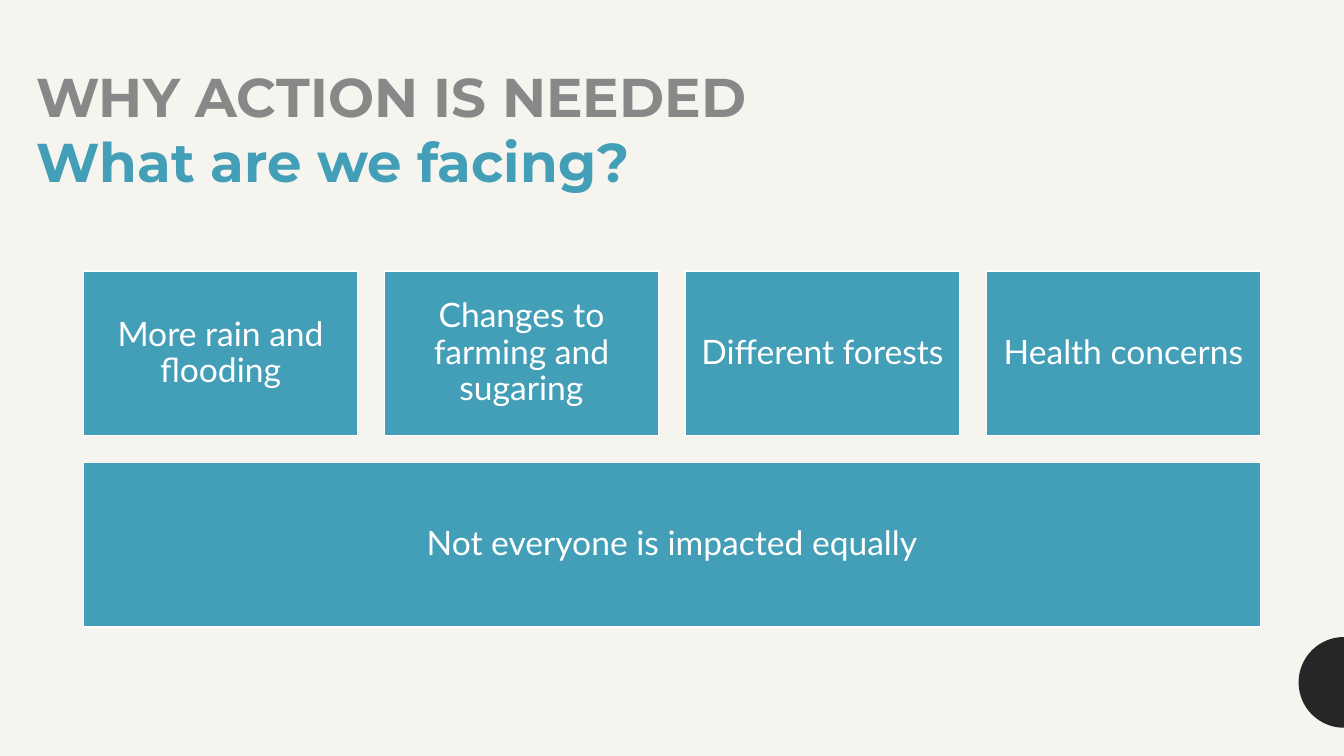
from math import cos, pi, sin

from pptx import Presentation
from pptx.dml.color import RGBColor
from pptx.enum.shapes import MSO_SHAPE
from pptx.enum.text import MSO_ANCHOR, MSO_AUTO_SIZE, PP_ALIGN
from pptx.util import Inches, Pt

COLORS = {
    "background": "F6F4EF",
    "gray": "888888",
    "teal": "439EB7",
    "white": "FFFFFF",
    "dark": "262626",
}
TITLE_LINES = [("WHY ACTION IS NEEDED", "gray"), ("What are we facing?", "teal")]
IMPACTS = [
    "More rain and flooding",
    "Changes to farming and sugaring",
    "Different forests",
    "Health concerns",
]
SUMMARY = "Not everyone is impacted equally"

SLIDE_WIDTH, SLIDE_HEIGHT = 13.33, 7.5
GRID_LEFT, GRID_TOP, GRID_WIDTH = 0.83, 2.69, 11.67
ROW_HEIGHT, GAP = 1.63, 0.27
COLUMN_WIDTH = (GRID_WIDTH - GAP * (len(IMPACTS) - 1)) / len(IMPACTS)
ARC_CENTER_Y, ARC_RADIUS, ARC_STEPS = 6.77, 0.45, 48


def color(name):
    return RGBColor.from_string(COLORS[name])


def set_margins(text_frame):
    text_frame.margin_left = text_frame.margin_right = Inches(0.1)
    text_frame.margin_top = text_frame.margin_bottom = Inches(0.1)
    text_frame.word_wrap = True


def format_run(run, font_name, size, color_name, bold=False):
    run.font.name = font_name
    run.font.size = Pt(size)
    run.font.bold = bold
    run.font.color.rgb = color(color_name)


def add_title(slide):
    title = slide.shapes.title
    title.left, title.top = Inches(0.26), Inches(0.52)
    title.width, title.height = Inches(11.34), Inches(1.52)
    text_frame = title.text_frame
    text_frame.text = "\n".join(text for text, _ in TITLE_LINES)
    set_margins(text_frame)
    text_frame.vertical_anchor = MSO_ANCHOR.TOP
    text_frame.auto_size = MSO_AUTO_SIZE.NONE
    for paragraph, (_, color_name) in zip(text_frame.paragraphs, TITLE_LINES):
        paragraph.alignment = PP_ALIGN.LEFT
        format_run(paragraph.runs[0], "Montserrat", 39, color_name, True)


def add_half_circle(slide):
    angles = [pi * step / ARC_STEPS for step in range(ARC_STEPS + 1)]
    points = [
        (
            Inches(SLIDE_WIDTH - ARC_RADIUS * sin(angle)),
            Inches(ARC_CENTER_Y - ARC_RADIUS * cos(angle)),
        )
        for angle in angles
    ]
    builder = slide.shapes.build_freeform(*points[0])
    builder.add_line_segments(points[1:], close=True)
    half_circle = builder.convert_to_shape()
    half_circle.shadow.inherit = False
    half_circle.fill.solid()
    half_circle.fill.fore_color.rgb = color("dark")
    half_circle.line.fill.background()


def add_card(slide, text, column, row, width):
    left = GRID_LEFT + column * (COLUMN_WIDTH + GAP)
    top = GRID_TOP + row * (ROW_HEIGHT + GAP)
    card = slide.shapes.add_shape(
        MSO_SHAPE.RECTANGLE,
        Inches(left), Inches(top), Inches(width), Inches(ROW_HEIGHT),
    )
    card.shadow.inherit = False
    card.fill.solid()
    card.fill.fore_color.rgb = color("teal")
    card.line.color.rgb = color("white")
    card.line.width = Pt(1)
    text_frame = card.text_frame
    text_frame.text = text
    set_margins(text_frame)
    text_frame.vertical_anchor = MSO_ANCHOR.MIDDLE
    paragraph = text_frame.paragraphs[0]
    paragraph.alignment = PP_ALIGN.CENTER
    paragraph.line_spacing = 0.9
    format_run(paragraph.runs[0], "Lato", 24, "white")


def main():
    presentation = Presentation()
    presentation.slide_width = Inches(SLIDE_WIDTH)
    presentation.slide_height = Inches(SLIDE_HEIGHT)
    slide = presentation.slides.add_slide(presentation.slide_layouts[5])
    slide.background.fill.solid()
    slide.background.fill.fore_color.rgb = color("background")
    add_half_circle(slide)
    for column, text in enumerate(IMPACTS):
        add_card(slide, text, column, 0, COLUMN_WIDTH)
    add_card(slide, SUMMARY, 0, 1, GRID_WIDTH)
    add_title(slide)
    presentation.save("out.pptx")


if __name__ == "__main__":
    main()
